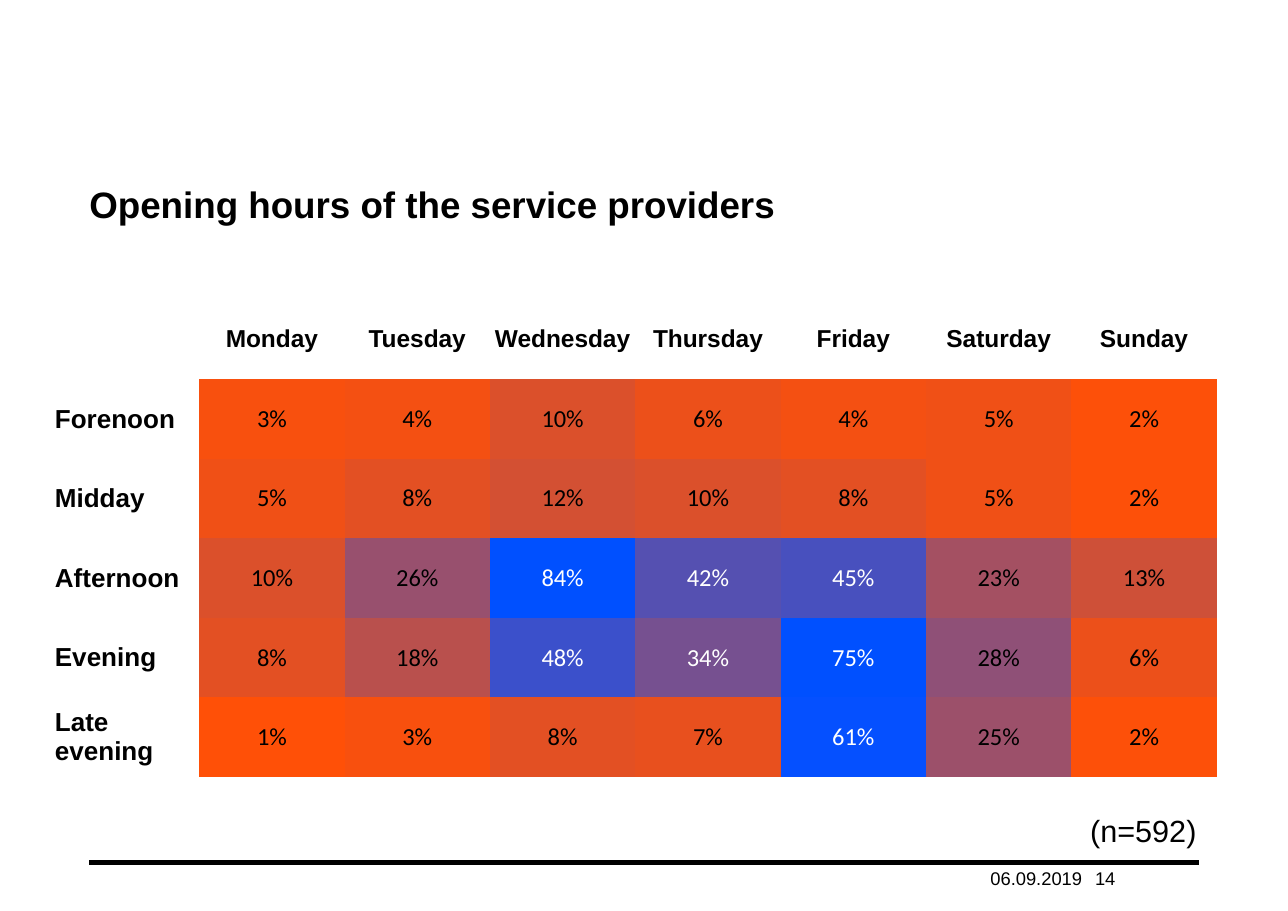
import lxml.etree
import pptx
import pptx.dml.color
import pptx.enum.shapes
import pptx.enum.text
import pptx.oxml.ns
import pptx.util
from dataclasses import dataclass

Pt = pptx.util.Pt
Align = pptx.enum.text.PP_ALIGN
Anchor = pptx.enum.text.MSO_ANCHOR

TITLE = "Opening hours of the service providers"
DAYS = ["Monday", "Tuesday", "Wednesday", "Thursday", "Friday", "Saturday", "Sunday"]
SHARES = {
    "Forenoon": [3, 4, 10, 6, 4, 5, 2],
    "Midday": [5, 8, 12, 10, 8, 5, 2],
    "Afternoon": [10, 26, 84, 42, 45, 23, 13],
    "Evening": [8, 18, 48, 34, 75, 28, 6],
    "Late evening": [1, 3, 8, 7, 61, 25, 2],
}
SAMPLE, DATE, PAGE = "(n=592)", "06.09.2019", "14"


@dataclass(frozen=True)
class Theme:
    ink: str = "000000"
    light: str = "FFFFFF"
    font: str = "Arial"
    data: str = "Calibri"
    title: int = 24
    note: int = 20
    label: int = 17
    cell: int = 16
    foot: int = 12


THEME = Theme()
NO_GRID = "{2D5ABB26-0587-4C30-8999-92F81FD0307C}"
LEFT, RIGHT, RULE_Y = 58.4, 783.4, 563.6
GRID_X, GRID_Y, COL_W, ROW_H = 35.2, 195.9, 95, 52


def rgb(code):
    return pptx.dml.color.RGBColor.from_string(code)


def write(frame, text, size, bold=False, font=THEME.font, color=THEME.ink, align=Align.LEFT):
    para = frame.paragraphs[0]
    para.alignment = align
    run = para.add_run()
    run.text = text
    run.font.size, run.font.bold, run.font.name = Pt(size), bold, font
    run.font.color.rgb = rgb(color)


def inset(frame, size):
    frame.margin_left = frame.margin_right = Pt(size)
    frame.margin_top = frame.margin_bottom = Pt(size)


def place(shape, left, top, width, height):
    shape.left, shape.top = Pt(left), Pt(top)
    shape.width, shape.height = Pt(width), Pt(height)


def heat(share):
    """Blend from orange at a low share to blue at a high one."""
    red = max(0, min(255, round(261 - 4.2 * share)))
    blue = min(255, 262 - red)
    return pptx.dml.color.RGBColor(red, 80, blue)


def add_title(slide):
    title = slide.shapes.title
    place(title, LEFT, 118.8, RIGHT - LEFT, 28.8)
    inset(title.text_frame, 0)
    title.text_frame.vertical_anchor = Anchor.MIDDLE
    write(title.text_frame, TITLE, THEME.title, True)


def add_grid(slide):
    rows, cols = len(SHARES) + 1, len(DAYS) + 1
    frame = slide.shapes.add_table(rows, cols, Pt(GRID_X), Pt(GRID_Y),
                                   Pt(cols * COL_W), Pt(rows * ROW_H))
    frame.element.xpath(".//a:tableStyleId")[0].text = NO_GRID
    table = frame.table
    table.horz_banding = False
    for col in table.columns:
        col.width = Pt(COL_W)
    for row in table.rows:
        row.height = Pt(ROW_H)
    for cell in table.iter_cells():
        inset(cell, 0.7)
        cell.vertical_anchor = Anchor.MIDDLE
        cell.fill.background()
    for x, day in enumerate(DAYS, 1):
        write(table.cell(0, x).text_frame, day, THEME.cell, True, align=Align.CENTER)
    for y, (label, shares) in enumerate(SHARES.items(), 1):
        write(table.cell(y, 0).text_frame, label, THEME.label, True)
        for x, share in enumerate(shares, 1):
            cell = table.cell(y, x)
            cell.fill.solid()
            cell.fill.fore_color.rgb = heat(share)
            color = THEME.light if share > 30 else THEME.ink
            write(cell.text_frame, f"{share}%", THEME.cell, False, THEME.data,
                  color, Align.CENTER)


def add_foot(slide):
    rule = slide.shapes.add_connector(pptx.enum.shapes.MSO_CONNECTOR.STRAIGHT,
                                      Pt(LEFT), Pt(RULE_Y), Pt(RIGHT), Pt(RULE_Y))
    rule.line.width = Pt(3)
    rule.line.color.rgb = rgb(THEME.ink)
    props = rule.element.find(pptx.oxml.ns.qn("p:spPr"))
    lxml.etree.SubElement(props, pptx.oxml.ns.qn("a:effectLst"))

    for text, left in ((DATE, 647.2), (PAGE, 715.6)):
        frame = slide.shapes.add_textbox(Pt(left), Pt(566.6), Pt(68), Pt(14.4)).text_frame
        inset(frame, 0)
        frame.word_wrap = True
        frame.vertical_anchor = Anchor.BOTTOM
        write(frame, text, THEME.foot)

    frame = slide.shapes.add_textbox(Pt(704.9), Pt(527), Pt(84.2), Pt(31.5)).text_frame
    frame.word_wrap = False
    write(frame, SAMPLE, THEME.note, align=Align.RIGHT)


def main():
    deck = pptx.Presentation()
    deck.slide_width, deck.slide_height = Pt(841.68), Pt(595.44)
    slide = deck.slides.add_slide(deck.slide_layouts[5])
    add_title(slide)
    add_grid(slide)
    add_foot(slide)
    deck.save("out.pptx")


if __name__ == "__main__":
    main()
